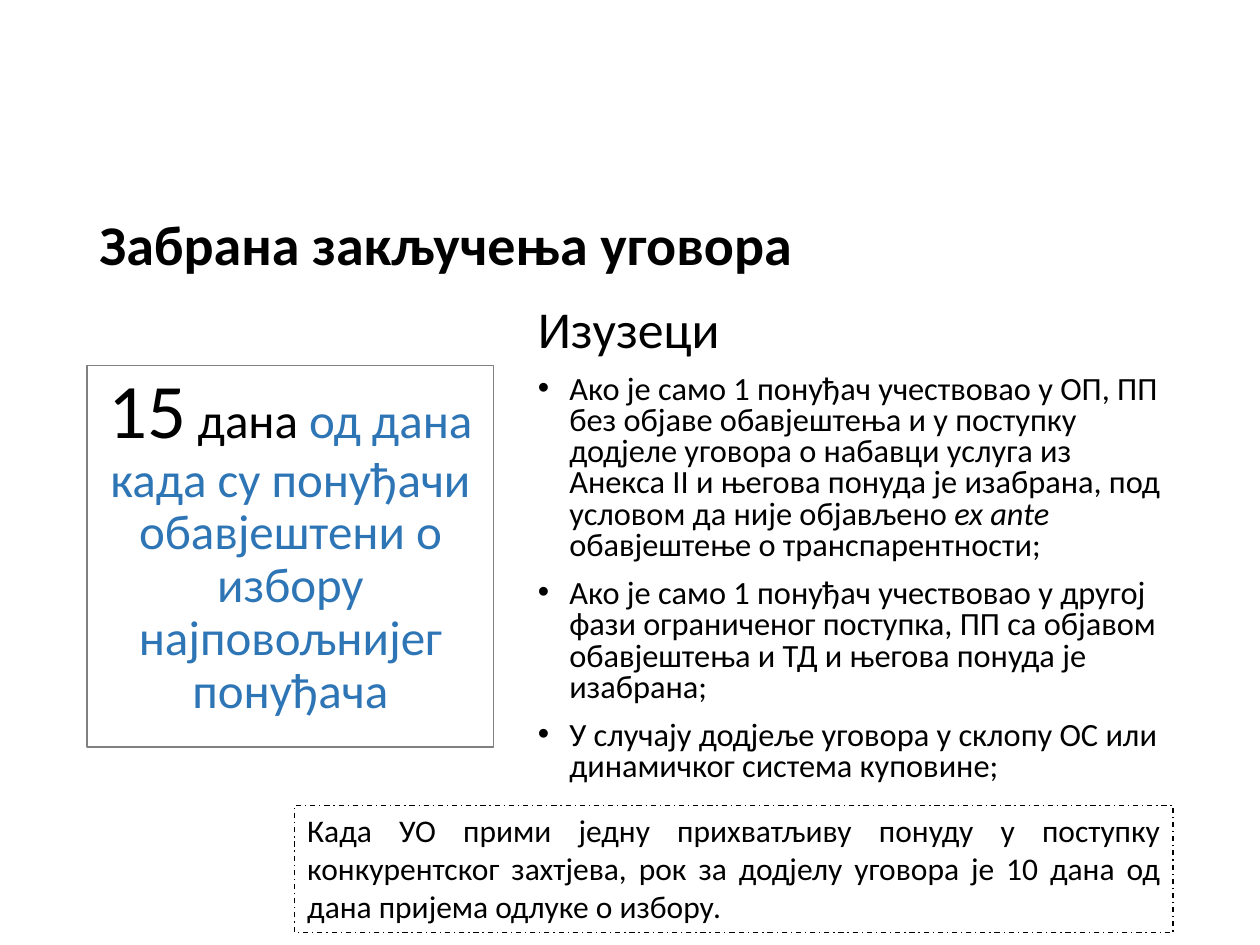
from pptx import Presentation
from pptx.dml.color import RGBColor
from pptx.enum.dml import MSO_LINE
from pptx.enum.shapes import MSO_SHAPE
from pptx.enum.text import MSO_ANCHOR, PP_ALIGN
from pptx.oxml.ns import qn
from pptx.util import Inches, Pt
from lxml import etree

RECT = MSO_SHAPE.RECTANGLE
TOP, BOTTOM = MSO_ANCHOR.TOP, MSO_ANCHOR.BOTTOM
LEFT, CENTER, JUSTIFY = PP_ALIGN.LEFT, PP_ALIGN.CENTER, PP_ALIGN.JUSTIFY
DASH_DOT = MSO_LINE.DASH_DOT

THEME = {
    "font": "Calibri",
    "text": "000000", "accent": "2E75B6", "frame": "808080",
    "title": 32, "heading": 29.6, "body": 18.5,
    "number": 44, "period": 28, "note": 18,
}

# Content: each run is (text, size, colour, style)
TITLE = [("Забрана закључења уговора", "title", "text", "bold")]
PERIOD = [
    ("15", "number", "text", ""),
    (" дана ", "period", "text", ""),
    ("од дана када су понуђачи обавјештени о избору најповољнијег понуђача",
     "period", "accent", ""),
]
HEADING = [("Изузеци", "heading", "text", "")]
EXCEPTIONS = [
    [("Ако је само 1 понуђач учествовао у ОП, ПП без објаве обавјештења и у "
      "поступку додјеле уговора о набавци услуга из Анекса II и његова понуда "
      "је изабрана, под условом да није објављено ", "body", "text", ""),
     ("ex ante ", "body", "text", "italic"),
     ("обавјештење о транспарентности;", "body", "text", "")],
    [("Ако је само 1 понуђач учествовао у другој фази ограниченог поступка, "
      "ПП са објавом обавјештења и ТД и његова понуда је изабрана;",
      "body", "text", "")],
    [("У случају додјеље уговора у склопу ОС или динамичког система куповине;",
      "body", "text", "")],
]
NOTE = [("Када УО прими једну прихватљиву понуду у поступку конкурентског "
         "захтјева, рок за додјелу уговора је 10 дана од дана пријема одлуке "
         "о избору.", "note", "text", "")]

# Shared edges of the layout
LEFT_EDGE, RIGHT_EDGE = 0.69, 9.31
EXCEPTIONS_LEFT, NOTE_LEFT = 4.17, 2.34


def color(name):
    return RGBColor.from_string(THEME[name])


def add_bullet(p):
    pPr = p._p.get_or_add_pPr()
    pPr.set("marL", str(Inches(0.25)))
    pPr.set("indent", str(-Inches(0.25)))
    etree.SubElement(pPr, qn("a:buFont")).set("typeface", "Arial")
    etree.SubElement(pPr, qn("a:buChar")).set("char", "•")


def write(s, paragraphs, align=LEFT, spacing=1.0, anchor=TOP, bullets=False):
    """Fill a shape; with bullets, every paragraph but the first gets one."""
    tf = s.text_frame
    tf.word_wrap = True
    tf.vertical_anchor = anchor
    for i, runs in enumerate(paragraphs):
        p = tf.add_paragraph() if i else tf.paragraphs[0]
        if bullets and i:
            add_bullet(p)
        p.alignment = align
        p.line_spacing = spacing
        p.space_before = Pt(10 if i else 0)
        for text, size, fill, style in runs:
            r = p.add_run()
            r.text = text
            r.font.name = THEME["font"]
            r.font.size = Pt(THEME[size])
            r.font.color.rgb = color(fill)
            r.font.bold = style == "bold"
            r.font.italic = style == "italic"


def add_text(s_tree, left, top, width, height):
    return s_tree.add_textbox(*map(Inches, (left, top, width, height)))


def add_frame(s_tree, left, top, width, height, line, dash=None):
    s = s_tree.add_shape(RECT, *map(Inches, (left, top, width, height)))
    s.shadow.inherit = False
    s.fill.background()
    s.line.color.rgb = color(line)
    s.line.width = Pt(0.75)
    if dash:
        s.line.dash_style = dash
    return s


def main():
    prs = Presentation()
    prs.slide_width, prs.slide_height = Inches(10), Inches(7.5)
    shapes = prs.slides.add_slide(prs.slide_layouts[6]).shapes

    # Title
    sp = add_text(shapes, LEFT_EDGE, 0.5, 7.4, 1.75)
    write(sp, [TITLE], spacing=0.9, anchor=BOTTOM)

    # Exceptions
    sp = add_text(shapes, EXCEPTIONS_LEFT, 2.4, RIGHT_EDGE - EXCEPTIONS_LEFT, 4)
    write(sp, [HEADING, *EXCEPTIONS], spacing=0.8, bullets=True)

    # Standstill period
    sp = add_frame(shapes, LEFT_EDGE, 2.9, 3.23, 3.03, "frame")
    write(sp, [PERIOD], CENTER, 0.9)

    # Note
    sp = add_frame(shapes, NOTE_LEFT, 6.39, RIGHT_EDGE - NOTE_LEFT, 1.01,
                   "text", DASH_DOT)
    write(sp, [NOTE], JUSTIFY)

    prs.save("out.pptx")


if __name__ == "__main__":
    main()
